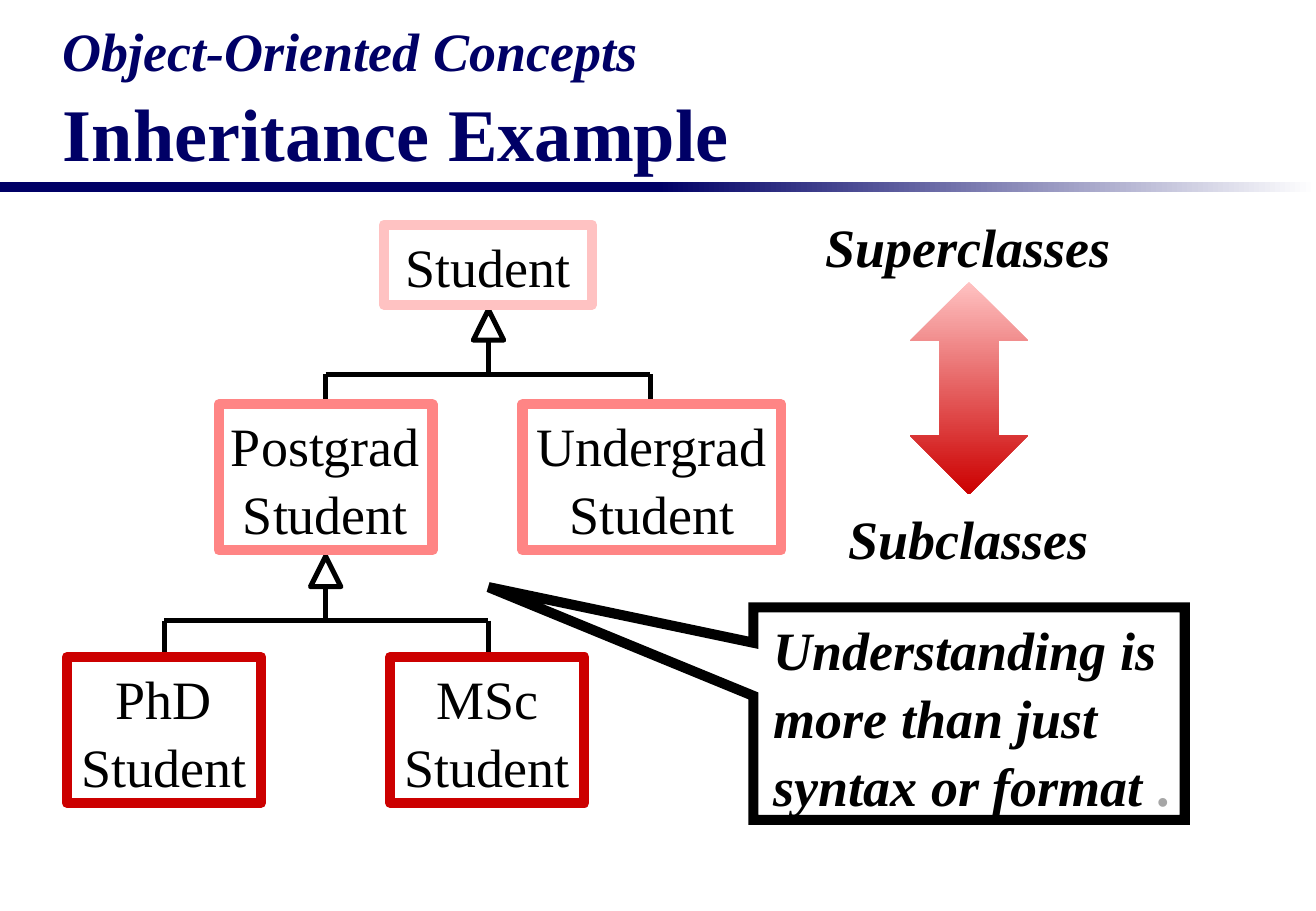
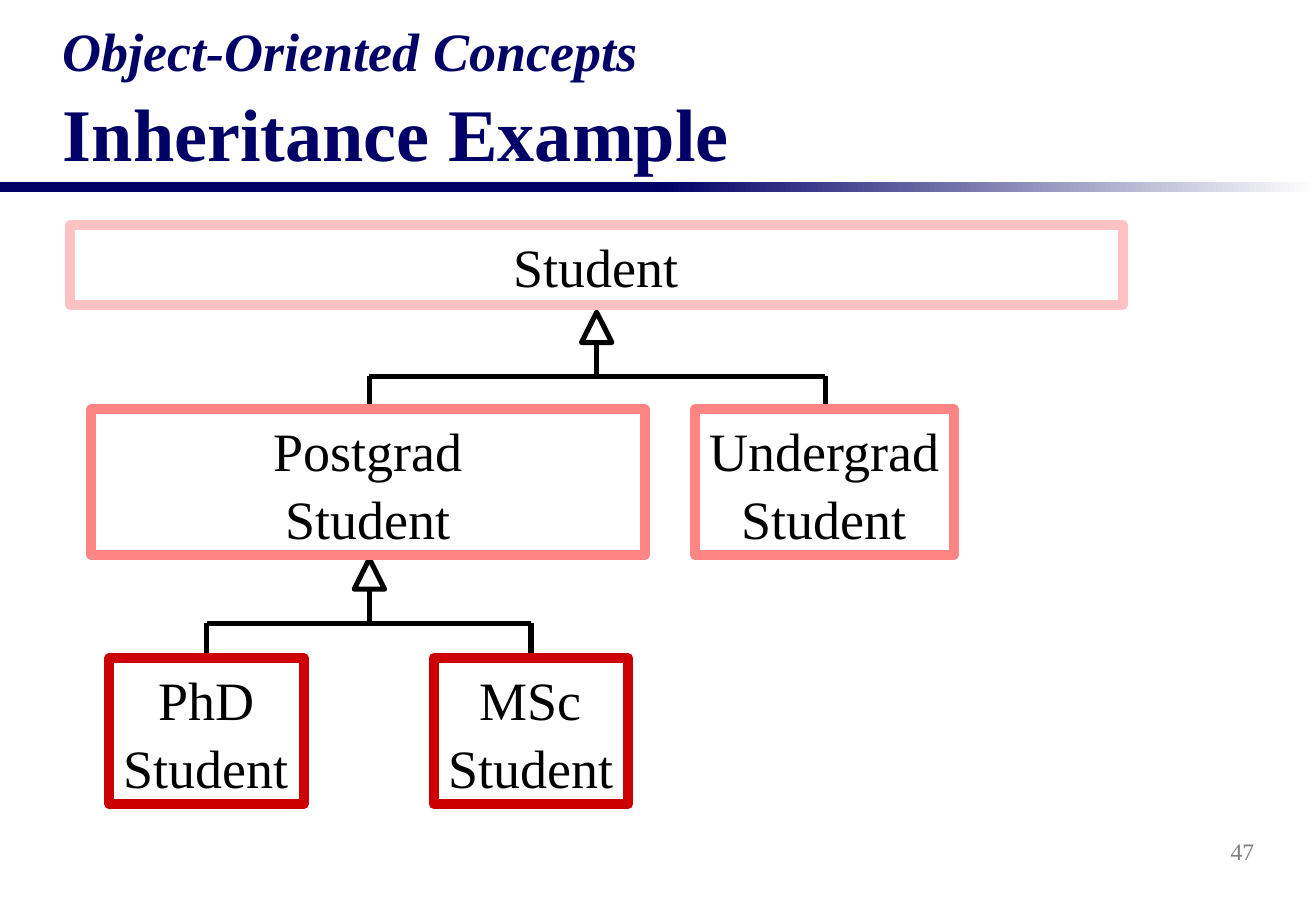
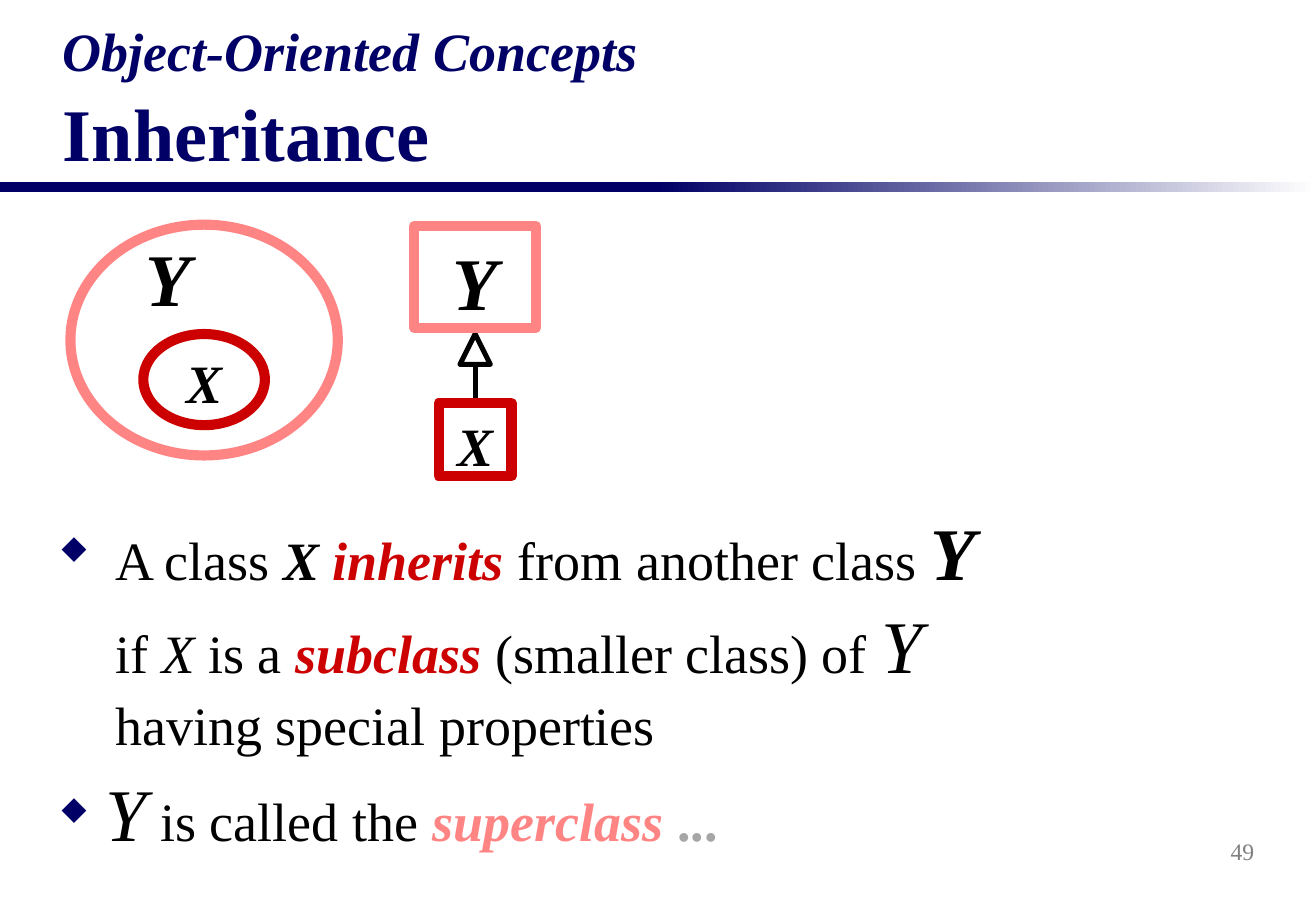
import pptx
import pptx.util
import pptx.dml.color
import pptx.enum.shapes
import pptx.enum.text
import pptx.oxml.ns
import lxml.etree

Inches, Pt = pptx.util.Inches, pptx.util.Pt
RGB = pptx.dml.color.RGBColor.from_string
MSO = pptx.enum.shapes.MSO_SHAPE
ALIGN = pptx.enum.text.PP_ALIGN
ANCHOR = pptx.enum.text.MSO_ANCHOR
qn = pptx.oxml.ns.qn

FONT = "Times New Roman"
COLORS = {
    "navy": "000066", "black": "000000", "white": "FFFFFF", "gray": "808080",
    "faint": "A6A6A6", "pale": "FFC2C2", "pink": "FF8585", "red": "CC0000",
}


def add_shape(s, kind, at, line=None, width=6, gradient=None, angle=0):
    """Add a preset shape, outlined or gradient filled; kind None gives a text box."""
    at = [Inches(v) for v in at]
    if kind is None:
        return s.shapes.add_textbox(*at)
    sp = s.shapes.add_shape(kind, *at)
    sp.shadow.inherit = False
    if gradient:
        sp.fill.gradient()
        sp.fill.gradient_angle = angle
        for stop, position, color in zip(sp.fill.gradient_stops, (0, 1), gradient):
            stop.position = position
            stop.color.rgb = RGB(COLORS[color])
    else:
        sp.fill.background()
    if line:
        sp.line.color.rgb = RGB(COLORS[line])
        sp.line.width = Pt(width)
    else:
        sp.line.fill.background()
    return sp


def write(sp, paragraphs, align=ALIGN.CENTER, anchor=ANCHOR.TOP):
    """Fill sp with paragraphs, each a list of (text, size, style letters, colour)."""
    tf = sp.text_frame
    tf.word_wrap = True
    tf.vertical_anchor = anchor
    for i, runs in enumerate(paragraphs):
        p = tf.add_paragraph() if i else tf.paragraphs[0]
        p.alignment = align
        p.line_spacing = 1.05
        for text, size, style, color in runs:
            r = p.add_run()
            r.text = text
            r.font.name = FONT
            r.font.size = Pt(size)
            r.font.bold = "b" in style
            r.font.italic = "i" in style
            r.font.color.rgb = RGB(COLORS[color])
    return tf


prs = pptx.Presentation()
prs.slide_width, prs.slide_height = Inches(10.83), Inches(7.5)

# Title, band and slide number
slides = []
for title, number in (("Inheritance Example", None), ("Inheritance Example", "47"),
                      ("Inheritance", "49")):
    s = prs.slides.add_slide(prs.slide_layouts[6])
    slides.append(s)
    for left, end in ((0, "navy"), (5.41, "white")):
        add_shape(s, MSO.RECTANGLE, (left, 1.5, 5.42, 0.08), gradient=("navy", end))
    write(add_shape(s, None, (0.42, 0.29, 10, 1.21)),
          [[("Object-Oriented Concepts", 32, "bi", "navy")], [(title, 44, "b", "navy")]],
          ALIGN.LEFT, ANCHOR.BOTTOM)
    if number:
        write(add_shape(s, None, (8.16, 6.75, 2.26, 0.5)),
              [[(number, 14, "", "gray")]], ALIGN.RIGHT, ANCHOR.MIDDLE)
tree, wide_tree, definition = slides

# Generalization arrows: slide, parent x, triangle top, child x positions
for s, x, top, children in (
    (tree, 4.02, 2.55, (2.68, 5.35)),
    (tree, 2.68, 4.58, (1.35, 4.02)),
    (wide_tree, 4.91, 2.57, (3.04, 6.79)),
    (wide_tree, 3.04, 4.6, (1.7, 4.37)),
    (definition, 3.91, 2.75, ()),
):
    add_shape(s, MSO.ISOSCELES_TRIANGLE, (x - 0.125, top, 0.25, 0.25), "black", 3)
    bar = top + 0.53
    lines = [(x, top + 0.25, x, bar)]
    lines += [(child, bar, child, bar + 0.27) for child in children]
    if children:
        lines.append((children[0], bar, children[-1], bar))
    for ends in lines:
        cx = s.shapes.add_connector(pptx.enum.shapes.MSO_CONNECTOR.STRAIGHT,
                                    *[Inches(v) for v in ends])
        cx.line.color.rgb = RGB(COLORS["black"])
        cx.line.width = Pt(3)
        lxml.etree.SubElement(cx._element.spPr, qn("a:effectLst"))

# Class boxes
for s, names, at, color in (
    (tree, ["Student"], (3.16, 1.85, 1.71, 0.66), "pale"),
    (tree, ["Postgrad Student"], (1.8, 3.33, 1.76, 1.2), "pink"),
    (tree, ["Undergrad Student"], (4.3, 3.33, 2.13, 1.2), "pink"),
    (tree, ["PhD Student"], (0.55, 5.41, 1.6, 1.2), "red"),
    (tree, ["MSc Student"], (3.21, 5.41, 1.6, 1.2), "red"),
    (wide_tree, ["Student"], (0.58, 1.85, 8.66, 0.66), "pale"),
    (wide_tree, ["Postgrad", "Student"], (0.75, 3.37, 4.56, 1.2), "pink"),
    (wide_tree, ["Undergrad Student"], (5.72, 3.37, 2.13, 1.2), "pink"),
    (wide_tree, ["PhD Student"], (0.9, 5.42, 1.6, 1.2), "red"),
    (wide_tree, ["MSc Student"], (3.57, 5.42, 1.6, 1.2), "red"),
):
    write(add_shape(s, MSO.RECTANGLE, at, color),
          [[(name, 32, "", "black")] for name in names], anchor=ANCHOR.MIDDLE)

# Slide 1: direction arrow and callout
for label, top in (("Superclasses", 1.68), ("Subclasses", 4.09)):
    write(add_shape(tree, None, (6.67, top, 2.6, 0.64)), [[(label, 32, "bi", "black")]])
add_shape(tree, MSO.UP_DOWN_ARROW, (7.49, 2.32, 0.97, 1.75),
          gradient=("pale", "red"), angle=270)

callout = add_shape(tree, MSO.RECTANGULAR_CALLOUT, (6.2, 5, 3.55, 1.75), "black")
callout.adjustments[0], callout.adjustments[1] = -1.114, -0.595
miter = lxml.etree.SubElement(callout.line._get_or_add_ln(), qn("a:miter"))
miter.set("lim", "800000")
tf = write(callout, [[("Understanding is more than just syntax or format ", 32, "bi", "black"),
                      (".", 32, "b", "faint")]], ALIGN.LEFT)
tf.paragraphs[0]._p.get_or_add_pPr().set("marL", str(Inches(0.07)))

# Slide 3: sets and classes
for kind, at, color in ((MSO.OVAL, (0.58, 1.85, 2.2, 1.9), "pink"),
                        (MSO.OVAL, (1.18, 2.75, 1, 0.75), "red"),
                        (MSO.RECTANGLE, (3.41, 1.86, 1, 0.84), "pink"),
                        (MSO.RECTANGLE, (3.61, 3.32, 0.6, 0.6), "red")):
    add_shape(definition, kind, at, color)
for name, size, at in (("Y", 44, (1.09, 1.83, 0.58, 0.84)), ("X", 32, (1.26, 2.8, 0.84, 0.8)),
                       ("Y", 44, (3.41, 1.86, 1, 0.84)), ("X", 32, (3.61, 3.32, 0.6, 0.6))):
    write(add_shape(definition, None, at), [[(name, size, "bi", "black")]])

# Slide 3: bulleted definitions
for at, indent, runs in (
    ((0.41, 4.08, 8, 2.15), 0.44, [
        ("A class ", 32, "", "black"), ("X ", 32, "bi", "black"),
        ("inherits", 32, "bi", "red"), (" from another class ", 32, "", "black"),
        ("Y", 44, "bi", "black"), (" if ", 32, "", "black"), ("X", 32, "i", "black"),
        (" is a ", 32, "", "black"), ("subclass ", 32, "bi", "red"),
        ("(smaller class) of ", 32, "", "black"), ("Y ", 44, "i", "black"),
        ("having special properties", 32, "", "black")]),
    ((0.41, 6.23, 8.6, 0.8), 0.25, [
        (" ", 32, "i", "black"), ("Y", 44, "i", "black"),
        (" is called the ", 32, "", "black"), ("superclass", 32, "bi", "pink"),
        (" ...", 32, "b", "faint")]),
):
    p = write(add_shape(definition, None, at), [runs], ALIGN.LEFT).paragraphs[0]
    p.space_before = Pt(3)
    pPr = p._p.get_or_add_pPr()
    pPr.set("marL", str(Inches(indent)))
    pPr.set("indent", str(-Inches(indent)))
    color = lxml.etree.SubElement(pPr, qn("a:buClr"))
    lxml.etree.SubElement(color, qn("a:srgbClr")).set("val", COLORS["navy"])
    lxml.etree.SubElement(pPr, qn("a:buSzPct")).set("val", "60000")
    lxml.etree.SubElement(pPr, qn("a:buChar")).set("char", "◆")

prs.save("out.pptx")
